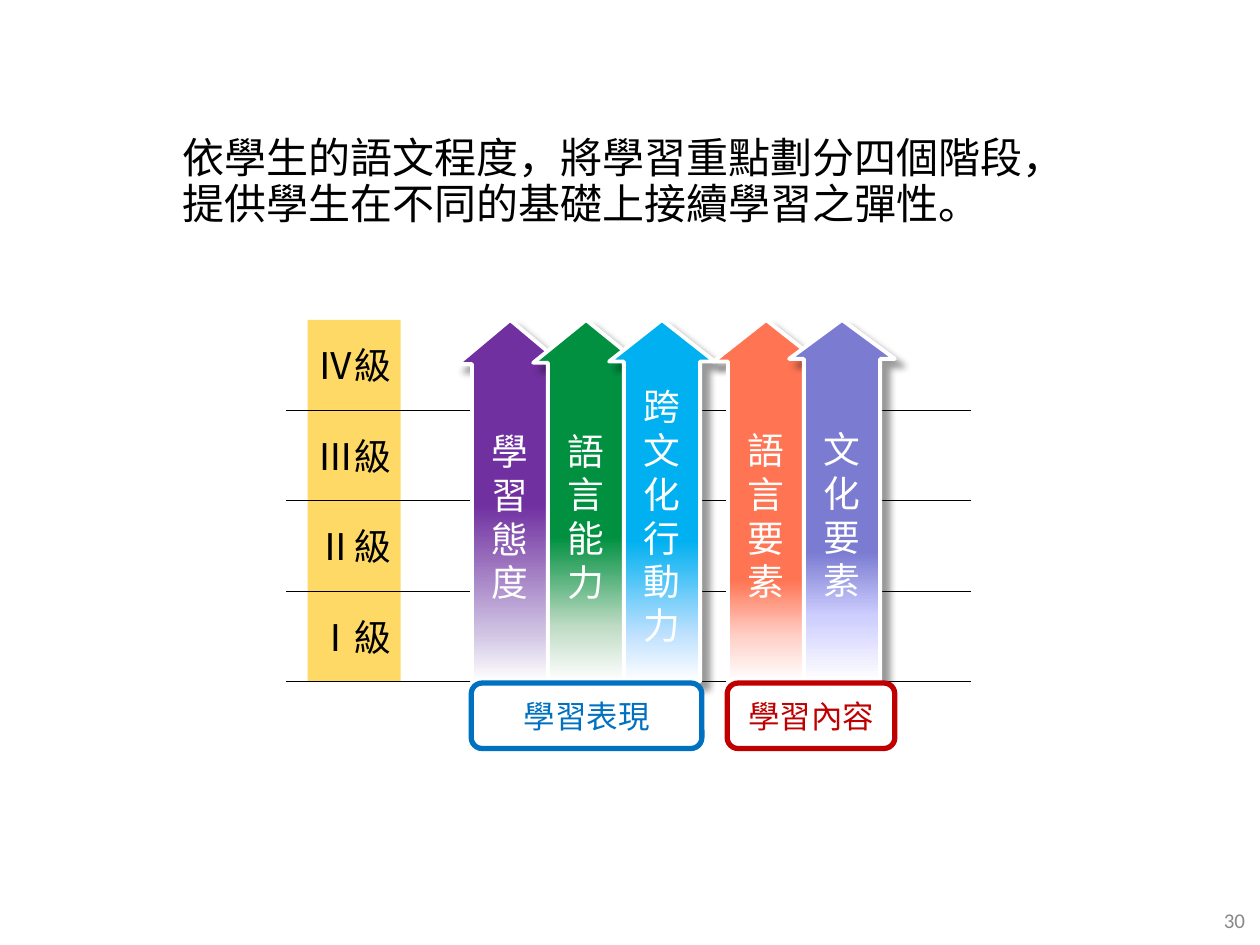
from lxml import etree
from pptx import Presentation, util as u
from pptx.dml.color import RGBColor
from pptx.enum import shapes, text
from pptx.oxml.ns import qn

Cm, Pt = u.Cm, u.Pt
CJK = "Noto Sans CJK TC"
COLORS = {
    "black": "000000", "white": "FFFFFF", "gray": "898989", "band": "FFD966",
    "blue": "0070C0", "red": "C00000",
    "purple": "7030A0", "pale purple": "CEC1E2",
    "green": "009040", "pale green": "C0DCC5",
    "sky": "00B0F0", "pale sky": "BFE1FF",
    "coral": "FF7554", "pale coral": "FFCEC5",
    "violet": "7A7BD1", "pale violet": "CECEFF",
}
TOP, HEIGHT = 6.45, 7.29
LEVELS = ["Ⅳ級", "Ⅲ級", "Ⅱ級", "Ⅰ級"]
STEP = HEIGHT / len(LEVELS)
# left, wording, colour, end of the solid part, end of the pale part, head ratio
ARROWS = [
    (9.22, "學習態度", "purple", 51, 86, 0.419),
    (10.75, "語言能力", "green", 60, 85, 0.406),
    (12.28, "跨文化行動力", "sky", 61, 87, 0.394),
    (14.38, "語言要素", "coral", 72, 87, 0.394),
    (15.91, "文化要素", "violet", 64, 82, 0.369),
]


def rgb(name):
    return RGBColor.from_string(COLORS[name])


def write(shape, wording, size, color, align=text.PP_ALIGN.LEFT, font=CJK, spacing=None):
    frame = shape.text_frame
    frame.word_wrap = True
    frame.vertical_anchor = text.MSO_ANCHOR.MIDDLE
    frame.text = wording
    for para in frame.paragraphs:
        para.alignment = align
        if spacing:
            para.line_spacing = Pt(spacing)
        para.font.size = Pt(size)
        para.font.color.rgb = rgb(color)
        para.font.name = font
        properties = para._p.pPr.find(qn("a:defRPr"))
        etree.SubElement(properties, qn("a:ea"), typeface=font)


def add_text(page, area, *args, **options):
    box = page.shapes.add_textbox(*map(Cm, area))
    write(box, *args, **options)
    return box


def add_block(page, kind, area, fill=None, line=None, width=0):
    block = page.shapes.add_shape(kind, *map(Cm, area))
    block.shadow.inherit = False
    if fill:
        block.fill.solid()
        block.fill.fore_color.rgb = rgb(fill)
    if line:
        block.line.color.rgb = rgb(line)
        block.line.width = Pt(width)
    else:
        block.line.fill.background()
    return block


def add_rule(page, y):
    rule = page.shapes.add_connector(
        shapes.MSO_CONNECTOR.STRAIGHT, Cm(5.77), Cm(y), Cm(19.58), Cm(y))
    rule.line.color.rgb = rgb("black")
    rule.line.width = Pt(0.5)
    etree.SubElement(rule._element.spPr, qn("a:effectLst"))


def add_color(parent, name):
    return etree.SubElement(parent, qn("a:srgbClr"), val=COLORS[name])


def fade_down(shape, stops):
    shape.fill.gradient()
    shape.fill.gradient_angle = 270
    stop_list = shape._element.spPr.find(".//" + qn("a:gsLst"))
    for old in list(stop_list):
        stop_list.remove(old)
    for position, color in stops:
        stop = etree.SubElement(stop_list, qn("a:gs"), pos=str(position * 1000))
        add_color(stop, color)


def cast_shadow(shape):
    effects = shape._element.spPr.find(qn("a:effectLst"))
    shadow = etree.SubElement(
        effects, qn("a:outerShdw"), blurRad=str(Pt(4)), dist=str(Pt(6)),
        dir="2700000", algn="tl", rotWithShape="0")
    etree.SubElement(add_color(shadow, "black"), qn("a:alpha"), val="40000")


def add_arrow(page, left, wording, color, solid_end, pale_end, head):
    arrow = add_block(page, shapes.MSO_SHAPE.UP_ARROW, (left, TOP, 2.13, HEIGHT),
                      line="white", width=2.25)
    arrow.adjustments[0] = 0.722
    arrow.adjustments[1] = head
    fade_down(arrow, [(solid_end, color), (pale_end, "pale " + color), (100, "white")])
    cast_shadow(arrow)
    write(arrow, "\n".join(wording), 21, "white", text.PP_ALIGN.CENTER, spacing=25)


def add_caption(page, left, width, wording, color):
    caption = add_block(page, shapes.MSO_SHAPE.ROUNDED_RECTANGLE,
                        (left, 13.77, width, 1.32), "white", color, 3)
    write(caption, wording, 18, color, text.PP_ALIGN.CENTER)


def main():
    deck = Presentation()
    deck.slide_width, deck.slide_height = Cm(25.4), Cm(19.05)
    page = deck.slides.add_slide(deck.slide_layouts[6])

    # Page number and heading
    add_text(page, (19.63, 18.03, 5.72, 1.02), "30", 12, "gray",
             text.PP_ALIGN.RIGHT, "Calibri")
    add_text(page, (3.43, 2.29, 19.05, 2.77),
             "依學生的語文程度，將學習重點劃分四個階段，\v提供學生在不同的基礎上接續學習之彈性。",
             24, "black", spacing=26)

    # Level scale
    add_block(page, shapes.MSO_SHAPE.RECTANGLE, (6.2, TOP, 1.88, HEIGHT), "band")
    for row, level in enumerate(LEVELS):
        add_rule(page, TOP + (row + 1) * STEP)
        label = add_text(page, (5.82, TOP + row * STEP, 13.67, STEP), level, 21, "black")
        label.text_frame.margin_left = Cm(0.58)

    # Learning strands
    for arrow in ARROWS:
        add_arrow(page, *arrow)

    # Strand groups
    add_caption(page, 9.5, 4.65, "學習表現", "blue")
    add_caption(page, 14.66, 3.38, "學習內容", "red")

    deck.save("out.pptx")


if __name__ == "__main__":
    main()
